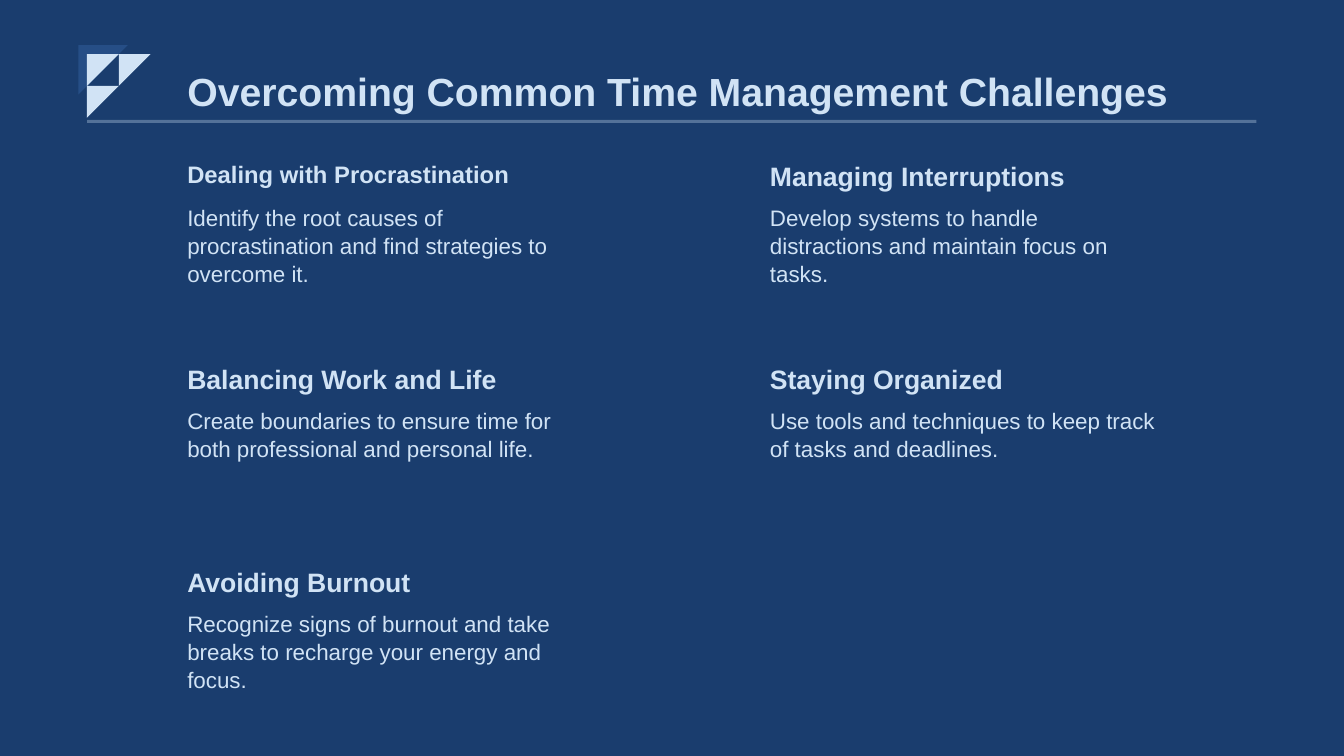
import pptx
import pptx.util
import pptx.dml.color
import pptx.enum.shapes
import pptx.enum.text
from lxml import etree

Pt = pptx.util.Pt
COLORS = {"background": "1A3D6E", "accent": "264E86", "light": "D1E3F5"}
FONT = "Arial"
CHALLENGES = [
    ("Dealing with Procrastination", 17,
     "Identify the root causes of procrastination and find strategies to overcome it."),
    ("Managing Interruptions", 19,
     "Develop systems to handle distractions and maintain focus on tasks."),
    ("Balancing Work and Life", 19,
     "Create boundaries to ensure time for both professional and personal life."),
    ("Staying Organized", 19,
     "Use tools and techniques to keep track of tasks and deadlines."),
    ("Avoiding Burnout", 19,
     "Recognize signs of burnout and take breaks to recharge your energy and focus."),
]


def rgb(name):
    return pptx.dml.color.RGBColor.from_string(COLORS[name])


def paint(sp, color):
    sp.fill.solid()
    sp.fill.fore_color.rgb = rgb(color)
    sp.line.fill.background()
    sp.shadow.inherit = False


def set_font(p, size, bold):
    p.font.name = FONT
    p.font.size = Pt(size)
    p.font.bold = bold
    p.font.color.rgb = rgb("light")


def add_triangle(shapes, x, y, side, color):
    builder = shapes.build_freeform(Pt(x), Pt(y))
    builder.add_line_segments([(Pt(x + side), Pt(y)), (Pt(x), Pt(y + side))], close=True)
    paint(builder.convert_to_shape(), color)


def add_ornament(s, x, y, side):
    shapes = s.shapes.add_group_shape().shapes
    add_triangle(shapes, x - 6.1, y - 6.4, 35.3, "accent")
    for col, row in [(0, 0), (1, 0), (0, 1)]:
        add_triangle(shapes, x + col * side, y + row * side, side, "light")


def add_rule(s, x, y, w, h):
    sp = s.shapes.add_shape(pptx.enum.shapes.MSO_SHAPE.RECTANGLE, Pt(x), Pt(y), Pt(w), Pt(h))
    paint(sp, "light")
    fill_color = sp.fill._xPr.solidFill[0]
    etree.SubElement(fill_color, pptx.oxml.ns.qn("a:alpha"), val="32000")


def set_title(s, text, x, y, w, h):
    sp = s.shapes.title
    sp.left, sp.top, sp.width, sp.height = Pt(x), Pt(y), Pt(w), Pt(h)
    tf = sp.text_frame
    tf.text = text
    tf.auto_size = pptx.enum.text.MSO_AUTO_SIZE.NONE
    tf.vertical_anchor = pptx.enum.text.MSO_ANCHOR.BOTTOM
    tf.margin_top = 0
    p = tf.paragraphs[0]
    p.alignment = pptx.enum.text.PP_ALIGN.LEFT
    set_font(p, 28, True)


def add_text(s, text, x, y, w, h, size, bold=False):
    tf = s.shapes.add_textbox(Pt(x), Pt(y), Pt(w), Pt(h)).text_frame
    tf.word_wrap = True
    tf.text = text
    p = tf.paragraphs[0]
    p.line_spacing = 1.05
    set_font(p, size, bold)


def add_challenge(s, challenge, x, y, w):
    heading, size, body = challenge
    add_text(s, heading, x, y, w, 31.7, size, bold=True)
    add_text(s, body, x, y + 31.7, w, 72.7, 16)


def add_challenges(s, x, y, column_step, row_step, w):
    for i, challenge in enumerate(CHALLENGES):
        row, col = divmod(i, 2)
        add_challenge(s, challenge, x + col * column_step, y + row * row_step, w)


def main():
    prs = pptx.Presentation()
    prs.slide_width, prs.slide_height = Pt(960), Pt(540)
    s = prs.slides.add_slide(prs.slide_layouts[5])
    s.background.fill.solid()
    s.background.fill.fore_color.rgb = rgb("background")
    add_rule(s, 62.3, 85.7, 835.2, 2.2)
    add_ornament(s, 62.1, 38.6, 22.8)
    set_title(s, "Overcoming Common Time Management Challenges", 126.7, 16.6, 772.6, 68.4)
    add_challenges(s, 126.7, 109.4, 416.2, 145, 290.9)
    prs.save("out.pptx")


if __name__ == "__main__":
    main()
